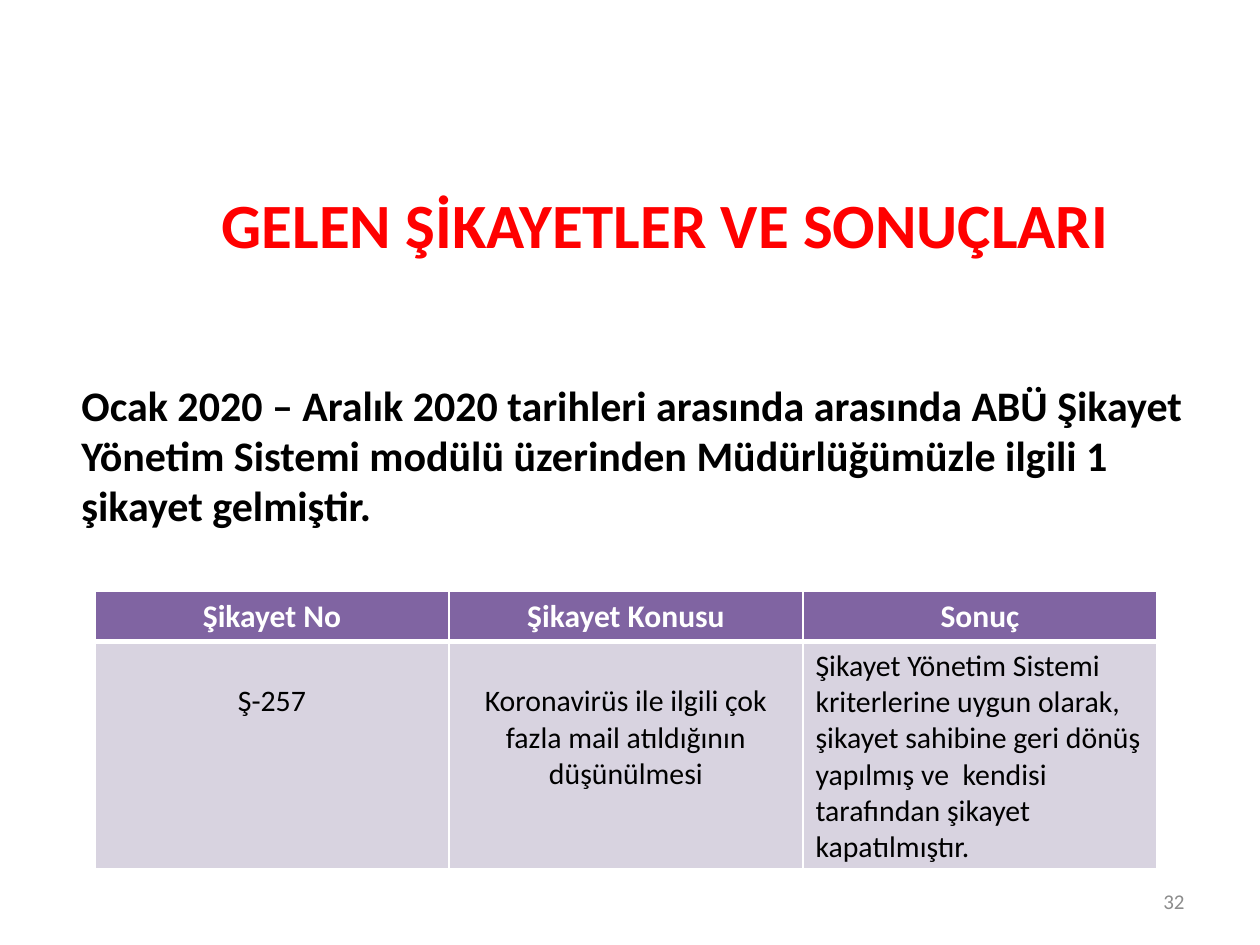
from lxml import etree
from pptx import Presentation
from pptx.dml.color import RGBColor
from pptx.enum.text import MSO_ANCHOR as Anchor, MSO_AUTO_SIZE as AutoSize, PP_ALIGN as Align
from pptx.oxml.ns import qn
from pptx.util import Emu, Pt

PX = 914400 // 126
COLORS = {"red": "FF0000", "black": "000000", "white": "FFFFFF", "gray": "8C8C8C",
          "header": "8064A2", "body": "D8D3E0"}


def write(frame, text, size, color, bold=False, align=Align.LEFT):
    frame.word_wrap = True
    para = frame.paragraphs[0]
    para.alignment = align
    span = para.add_run()
    span.text = text
    values = {"name": "Calibri", "size": Pt(size), "bold": bold}
    for name, value in values.items():
        setattr(span.font, name, value)
    span.font.color.rgb = RGBColor.from_string(COLORS[color])


def add_borders(cell, widths):
    """Draw white cell borders; widths maps a side (L, R, T, B) to points."""
    properties = cell._tc.get_or_add_tcPr()
    for index, (side, width) in enumerate(widths.items()):
        line = etree.Element(qn(f"a:ln{side}"), w=str(Pt(width)))
        fill = etree.SubElement(line, qn("a:solidFill"))
        etree.SubElement(fill, qn("a:srgbClr"), val=COLORS["white"])
        properties.insert(index, line)


deck = Presentation()
deck.slide_width, deck.slide_height = Emu(1260 * PX), Emu(945 * PX)
page = deck.slides.add_slide(deck.slide_layouts[5])

# Title
title = page.shapes.title
place = {"left": 184, "top": 179, "width": 963, "height": 89}
for name, value in place.items():
    setattr(title, name, Emu(value * PX))
title.text_frame.auto_size = AutoSize.NONE
title.text_frame.vertical_anchor = Anchor.TOP
write(title.text_frame, "GELEN ŞİKAYETLER VE SONUÇLARI", 36, "red", True, Align.CENTER)

# Summary and page number
summary = ("Ocak 2020 – Aralık 2020 tarihleri arasında arasında ABÜ Şikayet Yönetim Sistemi "
           "modülü üzerinden Müdürlüğümüzle ilgili 1 şikayet gelmiştir.")
boxes = [
    ((69, 373, 1145, 165), Anchor.TOP, (summary, 24, "black", True)),
    ((903, 876, 294, 50), Anchor.MIDDLE, ("32", 12, "gray", False, Align.RIGHT)),
]
for bounds, anchor, content in boxes:
    box = page.shapes.add_textbox(*(Emu(value * PX) for value in bounds))
    box.text_frame.vertical_anchor = anchor
    write(box.text_frame, *content)

# Complaint table
rows = [
    ["Şikayet No", "Şikayet Konusu", "Sonuç"],
    ["Ş-257", "Koronavirüs ile ilgili çok fazla mail atıldığının düşünülmesi",
     "Şikayet Yönetim Sistemi kriterlerine uygun olarak, şikayet sahibine geri dönüş "
     "yapılmış ve  kendisi tarafından şikayet kapatılmıştır."],
]
row_heights = [50, 227]
table = page.shapes.add_table(2, 3, Emu(95 * PX), Emu(591 * PX),
                              Emu(1062 * PX), Emu(sum(row_heights) * PX)).table
for column in table.columns:
    column.width = Emu(354 * PX)
for row, height in zip(table.rows, row_heights):
    row.height = Emu(height * PX)

for row_index, texts in enumerate(rows):
    is_header = row_index == 0
    for column_index, text in enumerate(texts):
        cell = table.cell(row_index, column_index)
        cell.fill.solid()
        cell.fill.fore_color.rgb = RGBColor.from_string(COLORS["header" if is_header else "body"])
        add_borders(cell, {"L": 1, "R": 1, "T": 1 if is_header else 3, "B": 3 if is_header else 1})
        is_result = not is_header and column_index == 2
        if not is_header and not is_result:
            cell.margin_top = Emu(42 * PX)
        write(cell.text_frame, text, 18 if is_header else 17,
              "white" if is_header else "black", is_header,
              Align.LEFT if is_result else Align.CENTER)

deck.save("out.pptx")
